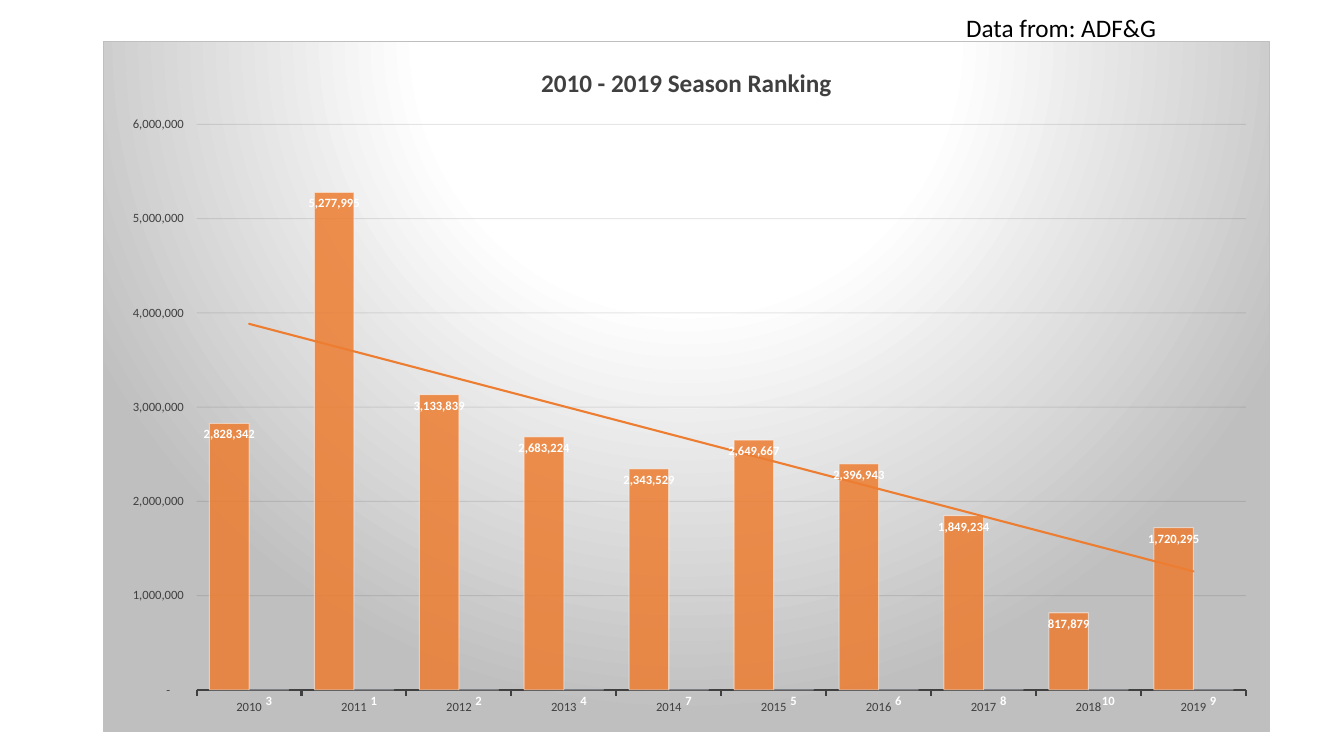
from lxml import etree
from pptx import Presentation
from pptx.chart.data import CategoryChartData
from pptx.dml.color import RGBColor
from pptx.enum.chart import XL_CHART_TYPE, XL_LABEL_POSITION, XL_TICK_MARK
from pptx.enum.text import MSO_AUTO_SIZE
from pptx.oxml import parse_xml
from pptx.oxml.ns import nsdecls, qn
from pptx.util import Cm, Pt

FONT = "Calibri"
BLACK = RGBColor(0x00, 0x00, 0x00)
WHITE = RGBColor(0xFF, 0xFF, 0xFF)
CHARCOAL = RGBColor(0x40, 0x40, 0x40)
GRID = RGBColor(0x0D, 0x0D, 0x0D)
SILVER = RGBColor(0xBF, 0xBF, 0xBF)
ORANGE = RGBColor(0xED, 0x7D, 0x31)
BLUE = RGBColor(0x44, 0x72, 0xC4)

YEARS = [str(year) for year in range(2010, 2020)]
TOTALS = [2828342, 5277995, 3133839, 2683224, 2343529,
          2649667, 2396943, 1849234, 817879, 1720295]
RANKS = [3, 1, 2, 4, 7, 5, 6, 8, 10, 9]
NUMBER_FORMAT = '_(* #,##0_);_(* \\(#,##0\\);_(* "-"??_);_('


def style_font(font, size, color, bold=False):
    font.name = FONT
    font.size = Pt(size)
    font.bold = bold
    font.color.rgb = color


def style_line(line, color, width):
    line.color.rgb = color
    line.width = Pt(width)


def set_opacity(properties, percent):
    """Make every solid colour below the element partly transparent."""
    for color in properties.iter(qn("a:srgbClr")):
        alpha = etree.SubElement(color, qn("a:alpha"))
        alpha.set("val", str(percent * 1000))


def add_source_note(page):
    box = page.shapes.add_textbox(Cm(24.1), Cm(0.18), Cm(5.36), Cm(1.02))
    box.text_frame.word_wrap = False
    box.text_frame.auto_size = MSO_AUTO_SIZE.SHAPE_TO_FIT_TEXT
    para = box.text_frame.paragraphs[0]
    para.text = "Data from: ADF&G"
    style_font(para.font, 18, BLACK)


def add_ranking_chart(page):
    data = CategoryChartData(number_format="#,##0")
    data.categories = YEARS
    data.add_series("Series 1", TOTALS)
    data.add_series("Series 2", RANKS)
    frame = page.shapes.add_chart(XL_CHART_TYPE.COLUMN_CLUSTERED,
                                  Cm(2.59), Cm(1.04), Cm(29.41), Cm(17.4), data)
    chart = frame.chart
    style_font(chart.font, 10, BLACK)
    chart.has_legend = False
    chart.has_title = True
    para = chart.chart_title.text_frame.paragraphs[0]
    para.text = "2010 - 2019 Season Ranking"
    style_font(para.font, 18, CHARCOAL, bold=True)
    return chart


def style_axes(chart):
    for axis in (chart.category_axis, chart.value_axis):
        axis.major_tick_mark = XL_TICK_MARK.OUTSIDE
        axis.minor_tick_mark = XL_TICK_MARK.NONE
        style_font(axis.tick_labels.font, 9, CHARCOAL)
    style_line(chart.category_axis.format.line, CHARCOAL, 1.5)

    values = chart.value_axis
    values.minimum_scale, values.maximum_scale = 0, 6000000
    values.major_unit = 1000000
    values.format.line.fill.background()
    values.tick_labels.number_format = NUMBER_FORMAT
    values.tick_labels.number_format_is_linked = False
    values.has_major_gridlines = True
    gridlines = values.major_gridlines.format.line
    style_line(gridlines, GRID, 0.75)
    set_opacity(values.major_gridlines._xAx.find(qn("c:majorGridlines")), 10)


def style_columns(series, color):
    series.invert_if_negative = False
    series.format.fill.solid()
    series.format.fill.fore_color.rgb = color
    style_line(series.format.line, WHITE, 0.75)
    properties = series._element.find(qn("c:spPr"))
    set_opacity(properties.find(qn("a:solidFill")), 85)
    set_opacity(properties.find(qn("a:ln")), 50)
    labels = series.data_labels
    labels.show_value = True
    labels.position = XL_LABEL_POSITION.INSIDE_END
    style_font(labels.font, 9, WHITE, bold=True)


def add_trend_line(series, color):
    trend = parse_xml(
        f'<c:trendline {nsdecls("c", "a")}><c:spPr><a:ln w="{Pt(1.5)}" cap="rnd">'
        f'<a:solidFill><a:srgbClr val="{color}"/></a:solidFill></a:ln></c:spPr>'
        '<c:trendlineType val="linear"/><c:dispRSqr val="0"/><c:dispEq val="0"/>'
        '</c:trendline>')
    series._element.find(qn("c:cat")).addprevious(trend)


def fill_chart_area(chart):
    stops = "".join(
        f'<a:gs pos="{place * 1000}"><a:srgbClr val="{color}"/></a:gs>'
        for place, color in ((0, WHITE), (39, WHITE), (100, SILVER)))
    area = parse_xml(
        f'<c:spPr {nsdecls("c", "a")}><a:gradFill><a:gsLst>{stops}</a:gsLst>'
        '<a:path path="circle"><a:fillToRect l="50000" t="-80000" r="50000" b="180000"/>'
        f'</a:path></a:gradFill><a:ln w="{Pt(0.75)}"><a:solidFill>'
        f'<a:srgbClr val="{SILVER}"/></a:solidFill></a:ln></c:spPr>')
    chart._chartSpace.find(qn("c:chart")).addnext(area)


def place_plot(chart, x, y, w, h):
    """Set the inner plot area as fractions of the chart."""
    sizes = "".join(f'<c:{name} val="{value}"/>'
                    for name, value in zip("xywh", (x, y, w, h)))
    layout = parse_xml(
        f'<c:layout {nsdecls("c")}><c:manualLayout><c:layoutTarget val="inner"/>'
        f'<c:xMode val="edge"/><c:yMode val="edge"/>{sizes}'
        '</c:manualLayout></c:layout>')
    plot_area = chart._chartSpace.find(".//" + qn("c:plotArea"))
    for automatic in plot_area.findall(qn("c:layout")):
        plot_area.remove(automatic)
    plot_area.insert(0, layout)


def main():
    deck = Presentation()
    deck.slide_width, deck.slide_height = Cm(33.87), Cm(19.05)
    page = deck.slides.add_slide(deck.slide_layouts[6])

    # Source note above the chart
    add_source_note(page)

    # Columns with totals and ranks
    chart = add_ranking_chart(page)
    style_axes(chart)
    plot = chart.plots[0]
    plot.gap_width = 65
    plot.vary_by_categories = False
    for series, color in zip(plot.series, (ORANGE, BLUE)):
        style_columns(series, color)
    add_trend_line(plot.series[0], ORANGE)

    # Chart background and plot position
    fill_chart_area(chart)
    place_plot(chart, 0.08, 0.12, 0.9, 0.82)

    deck.save("out.pptx")


if __name__ == "__main__":
    main()
